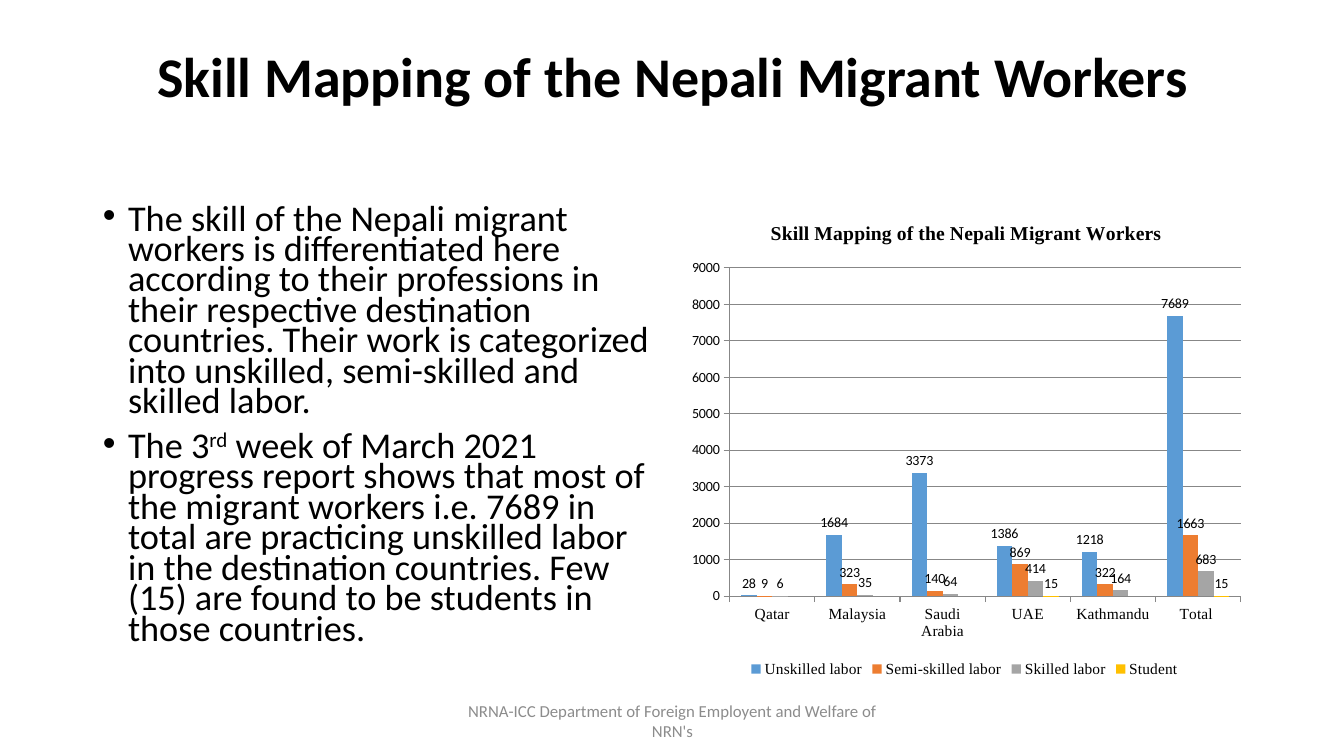
from lxml import etree
from pptx import Presentation
from pptx.chart.data import CategoryChartData
from pptx.dml.color import RGBColor
from pptx.enum.chart import (XL_CHART_TYPE, XL_LABEL_POSITION, XL_LEGEND_POSITION,
                             XL_TICK_MARK)
from pptx.enum.text import MSO_ANCHOR, MSO_AUTO_SIZE, PP_ALIGN
from pptx.oxml.ns import qn
from pptx.util import Inches, Pt

CLUSTERED = XL_CHART_TYPE.COLUMN_CLUSTERED
OUTSIDE_END = XL_LABEL_POSITION.OUTSIDE_END
LEGEND_BOTTOM = XL_LEGEND_POSITION.BOTTOM
TICK_OUT, TICK_NONE = XL_TICK_MARK.OUTSIDE, XL_TICK_MARK.NONE
TOP, MIDDLE = MSO_ANCHOR.TOP, MSO_ANCHOR.MIDDLE
LEFT, CENTER = PP_ALIGN.LEFT, PP_ALIGN.CENTER

SANS, SERIF = "Calibri", "Times New Roman"
COLORS = {
    "text": "000000", "footer": "8C8C8C", "axis": "878787",
    "unskilled": "5B9BD5", "semi": "ED7D31", "skilled": "A5A5A5", "student": "FFC000",
}

HEADING = "Skill Mapping of the Nepali Migrant Workers"
# Each bullet is a list of (text, is superscript) pieces
BULLETS = [
    [("The skill of the Nepali migrant workers is differentiated here according to "
      "their professions in their respective destination countries. Their work is "
      "categorized into unskilled, semi-skilled and skilled labor.", False)],
    [("The 3", False), ("rd", True),
     (" week of March 2021 progress report shows that most of the migrant workers "
      "i.e. 7689 in total are practicing unskilled labor in the destination countries. "
      "Few (15) are found to be students in those countries.", False)],
]
FOOTER = "NRNA-ICC Department of Foreign Employent and Welfare of NRN's"

PLACES = ["Qatar", "Malaysia", "Saudi Arabia", "UAE", "Kathmandu", "Total "]
SKILLS = [
    ("Unskilled labor", "unskilled", [28, 1684, 3373, 1386, 1218, 7689]),
    ("Semi-skilled labor", "semi", [9, 323, 140, 869, 322, 1663]),
    ("Skilled labor", "skilled", [6, 35, 64, 414, 164, 683]),
    ("Student ", "student", [None, None, None, 15, None, 15]),
]


def rgb(name):
    return RGBColor.from_string(COLORS[name])


def set_font(font, size, face=SANS, color="text", bold=False):
    font.name, font.size, font.bold = face, Pt(size), bold
    font.color.rgb = rgb(color)


def place(shape, left, top, width, height):
    shape.left, shape.top = Inches(left), Inches(top)
    shape.width, shape.height = Inches(width), Inches(height)


def set_frame(frame, anchor):
    frame.word_wrap = True
    frame.auto_size = MSO_AUTO_SIZE.NONE
    frame.vertical_anchor = anchor


def write(paragraph, text, size, align=LEFT, spacing=1.0, superscript=False, **style):
    paragraph.alignment, paragraph.line_spacing = align, spacing
    run = paragraph.add_run()
    run.text = text
    set_font(run.font, size, **style)
    if superscript:
        run._r.get_or_add_rPr().set("baseline", "30000")


def add_bullet(paragraph):
    properties = paragraph._p.get_or_add_pPr()
    properties.set("marL", str(Inches(0.25)))
    properties.set("indent", str(Inches(-0.25)))
    etree.SubElement(properties, qn("a:buFont")).set("typeface", "Arial")
    etree.SubElement(properties, qn("a:buChar")).set("char", "•")


def fill_title(title):
    place(title, 0.92, 0.4, 11.5, 1.45)
    set_frame(title.text_frame, MIDDLE)
    line = title.text_frame.paragraphs[0]
    write(line, HEADING, 40, align=CENTER, spacing=0.9, bold=True)
    line.add_line_break()
    set_font(line.font, 40, bold=True)


def fill_body(body):
    place(body, 0.92, 2, 5.67, 4.76)
    frame = body.text_frame
    set_frame(frame, TOP)
    for index, pieces in enumerate(BULLETS):
        bullet = frame.add_paragraph() if index else frame.paragraphs[0]
        add_bullet(bullet)
        bullet.space_before = Pt(10 if index else 0)
        for text, raised in pieces:
            write(bullet, text, 25.9, spacing=0.7, superscript=raised)


def style_axis(axis, size, face):
    axis.major_tick_mark, axis.minor_tick_mark = TICK_OUT, TICK_NONE
    axis.format.line.color.rgb = rgb("axis")
    set_font(axis.tick_labels.font, size, face)


def add_skill_chart(slide):
    data = CategoryChartData()
    data.categories = PLACES
    for name, _, counts in SKILLS:
        data.add_series(name, counts)
    chart = slide.shapes.add_chart(CLUSTERED, Inches(6.75), Inches(2),
                                   Inches(5.67), Inches(4.76), data).chart
    set_font(chart.font, 10)

    # Title and legend
    chart.has_title = True
    write(chart.chart_title.text_frame.paragraphs[0], HEADING, 14, align=CENTER,
          face=SERIF, bold=True)
    chart.chart_title.include_in_layout = False
    chart.has_legend = True
    chart.legend.position = LEGEND_BOTTOM
    chart.legend.include_in_layout = False
    set_font(chart.legend.font, 11, SERIF)

    # Axes
    style_axis(chart.category_axis, 11, SERIF)
    style_axis(chart.value_axis, 10, SANS)
    chart.value_axis.has_major_gridlines = True
    chart.value_axis.major_gridlines.format.line.color.rgb = rgb("axis")

    # Columns and their values
    columns = chart.plots[0]
    columns.gap_width = 150
    columns.vary_by_categories = False
    for series, (_, color, _) in zip(columns.series, SKILLS):
        series.format.fill.solid()
        series.format.fill.fore_color.rgb = rgb(color)
        series.data_labels.show_value = True
        series.data_labels.position = OUTSIDE_END
        set_font(series.data_labels.font, 10)


def add_footer(slide):
    footer = slide.shapes.add_textbox(Inches(4.42), Inches(6.95), Inches(4.5), Inches(0.4))
    set_frame(footer.text_frame, MIDDLE)
    write(footer.text_frame.paragraphs[0], FOOTER, 12, align=CENTER, color="footer")


def main():
    deck = Presentation()
    deck.slide_width, deck.slide_height = Inches(13.33), Inches(7.5)
    slide = deck.slides.add_slide(deck.slide_layouts[1])
    fill_title(slide.shapes.title)
    fill_body(slide.placeholders[1])
    add_skill_chart(slide)
    add_footer(slide)
    deck.save("out.pptx")


if __name__ == "__main__":
    main()
